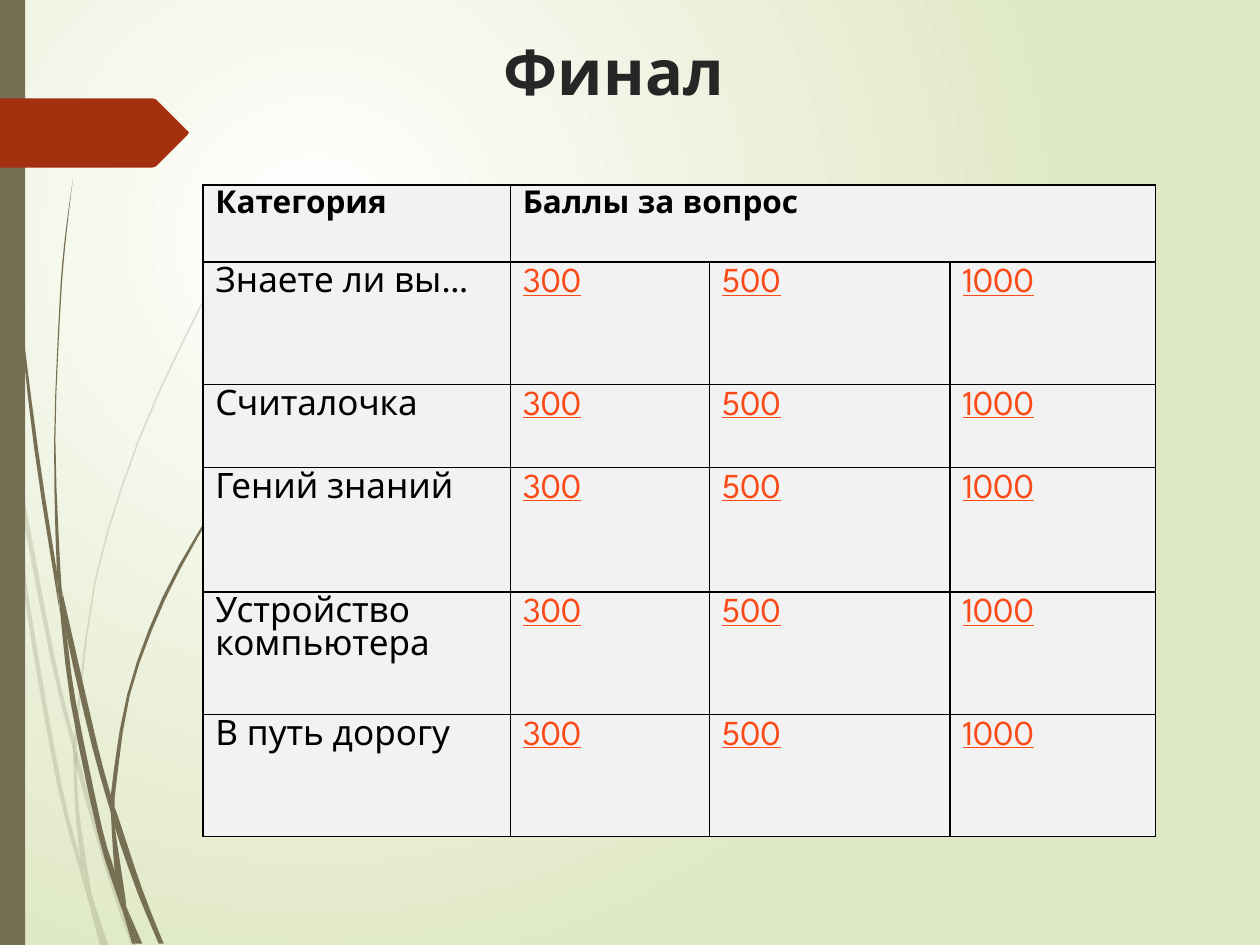
from dataclasses import dataclass

import lxml.etree
import pptx
import pptx.dml.color
import pptx.enum.shapes
import pptx.enum.text
import pptx.oxml
import pptx.oxml.ns
import pptx.util

Inches = pptx.util.Inches
Points = tuple[tuple[float, float], ...]
FONT = "League Spartan"
COLORS = {
    "white": "FFFFFF", "pale_green": "DFE8C4", "olive": "766F54", "rust": "A53010",
    "title": "262626", "black": "000000", "cell": "F2F2F2", "score": "FB4A18",
}


@dataclass(frozen=True)
class Blade:
    """A grass blade outlined by one edge down and another edge back."""
    down: Points
    back: Points


FADED_BLADES = (
    Blade(((0.08, 3.5), (0.06, 3.22), (0, 2.82)), ((0, 2.99), (0.07, 3.44), (0.08, 3.5))),
    Blade(((0.1, 3.45), (0.12, 3.76), (0.4, 5.22), (0.59, 5.99)),
          ((0.59, 5.86), (0.43, 5.2), (0.1, 3.45))),
    Blade(((0.61, 5.96), (0.61, 6.1), (0.85, 6.94), (1.04, 7.5)),
          ((1.08, 7.5), (0.88, 6.92), (0.64, 6.07), (0.61, 5.96))),
    Blade(((0.73, 7.11), (0.83, 7.5)), ((0.86, 7.5), (0.73, 7.11))),
    Blade(((0.08, 3.5), (0.19, 4.7), (0.45, 6.21), (0.64, 6.93), (0.7, 7.14)),
          ((0.69, 7.07), (0.64, 6.83), (0.48, 6.19), (0.22, 4.69), (0.12, 3.76), (0.08, 3.5))),
    Blade(((0.58, 5.99), (0.6, 6.46), (0.64, 6.83), (0.67, 6.92), (0.73, 7.11)),
          ((0.72, 7.06), (0.63, 6.46), (0.61, 6.1), (0.61, 6.08), (0.58, 5.99))),
    Blade(((2.17, 1.53), (2.01, 1.75), (1.86, 1.97), (1.58, 2.44), (1.1, 3.48),
           (0.75, 4.61), (0.59, 5.84), (0.59, 5.86), (0.61, 5.96)),
          ((0.61, 5.84), (0.76, 4.62), (1.11, 3.49), (1.59, 2.45), (1.87, 1.98),
           (2.01, 1.75), (2.17, 1.54))),
    Blade(((0.7, 7.14), (0.79, 7.5)), ((0.82, 7.5), (0.7, 7.14))),
    Blade(((0.59, 5.86), (0.58, 5.99), (0.61, 6.08), (0.61, 6.1)), ((0.61, 5.96), (0.59, 5.86))),
    Blade(((0.65, 6.83), (0.69, 7.07), (0.7, 7.14), (0.82, 7.5)),
          ((0.83, 7.5), (0.73, 7.11), (0.67, 6.92), (0.65, 6.83))),
)
SOLID_BLADES = (
    Blade(((0.02, 0), (0.03, 0.48), (0.05, 1.1), (0.14, 2.33), (0.27, 3.55), (0.46, 4.77),
           (0.47, 4.81)),
          ((0.45, 4.57), (0.45, 4.53), (0.3, 3.55), (0.15, 2.32), (0.06, 1.09), (0.04, 0.48),
           (0.03, 0))),
    Blade(((0.5, 4.72), (0.53, 5.05), (0.73, 5.92), (0.88, 6.45)),
          ((0.88, 6.33), (0.88, 6.31), (0.77, 5.9), (0.5, 4.72))),
    Blade(((0.91, 6.41), (0.91, 6.56), (1.09, 7.08), (1.26, 7.49)),
          ((1.3, 7.49), (1.13, 7.06), (0.94, 6.49), (0.91, 6.41))),
    Blade(((0.47, 4.77), (0.56, 5.57), (0.77, 6.59), (0.92, 7.08), (0.97, 7.22)),
          ((0.96, 7.17), (0.91, 6.91), (0.81, 6.57), (0.6, 5.56), (0.53, 5.05), (0.47, 4.77))),
    Blade(((0.58, 1.41), (0.51, 1.93), (0.47, 2.45), (0.43, 3.49), (0.45, 4.49), (0.49, 4.72)),
          ((0.5, 4.72), (0.48, 4.53), (0.44, 3.49), (0.48, 2.45), (0.52, 1.93), (0.58, 1.41))),
    Blade(((1, 7.19), (1.1, 7.49)), ((1.13, 7.49), (1, 7.19))),
    Blade(((0.45, 4.49), (0.45, 4.53), (0.47, 4.77), (0.53, 5.05)),
          ((0.5, 4.72), (0.49, 4.72), (0.45, 4.49))),
    Blade(((2.15, 3.44), (2.03, 3.58), (1.91, 3.73), (1.68, 4.05), (1.29, 4.74),
           (1.01, 5.51), (0.88, 6.31), (0.91, 6.41)),
          ((0.91, 6.33), (1.03, 5.52), (1.31, 4.76), (1.69, 4.06), (1.91, 3.74),
           (2.03, 3.59), (2.16, 3.44))),
    Blade(((0.97, 7.22), (1.05, 7.49)), ((1.08, 7.49), (0.97, 7.22))),
    Blade(((0.88, 6.45), (0.91, 6.91), (0.96, 7.06), (1, 7.19)),
          ((1, 7.16), (0.91, 6.56), (0.9, 6.51), (0.88, 6.45))),
    Blade(((0.88, 6.31), (0.88, 6.45), (0.9, 6.51), (0.91, 6.56)), ((0.91, 6.41), (0.88, 6.31))),
    Blade(((0.91, 6.91), (0.96, 7.17), (0.97, 7.22), (1.08, 7.49)),
          ((1.1, 7.49), (1, 7.19), (0.96, 7.06), (0.91, 6.91))),
)
ARROW = ((0, 0.78), (1.21, 0.78), (1.24, 0.79), (1.49, 1.04), (1.5, 1.05), (1.49, 1.07),
         (1.24, 1.32), (1.21, 1.33), (0, 1.33))

COLUMN_WIDTHS = (2.44, 1.58, 1.91, 1.63)
ROW_HEIGHTS = (0.61, 0.97, 0.66, 0.99, 0.97, 0.97)
CATEGORIES = ("Знаете ли вы…", "Считалочка", "Гений знаний", "Устройство компьютера",
              "В путь дорогу")
SCORES = ("300", "500", "1000")

HEADER = {"size": pptx.util.Pt(18), "bold": True}
BODY = {"size": pptx.util.Pt(20), "bold": False}
SCORE = BODY | {"underline": True}


def rgb(color: str) -> pptx.dml.color.RGBColor:
    return pptx.dml.color.RGBColor.from_string(COLORS[color])


def smooth_edge(anchors: Points, steps: int = 3) -> list[tuple[float, float]]:
    """Run a Catmull-Rom curve through the anchors; two anchors stay a straight line."""
    if len(anchors) == 2:
        return list(anchors)
    padded = (anchors[0], *anchors, anchors[-1])
    curve = [anchors[0]]
    for a, b, c, d in zip(padded, padded[1:], padded[2:], padded[3:]):
        for step in range(1, steps + 1):
            t = step / steps
            curve.append(tuple(
                q + t * (r - p) / 2 + t**2 * (2 * p - 5 * q + 4 * r - s) / 2
                + t**3 * (3 * q - p - 3 * r + s) / 2
                for p, q, r, s in zip(a, b, c, d)))
    return curve


def paint(shape, color: str, opacity: int = 100) -> None:
    shape.shadow.inherit = False
    shape.line.fill.background()
    shape.fill.solid()
    shape.fill.fore_color.rgb = rgb(color)
    if opacity < 100:
        tint = shape._element.spPr.find(".//" + pptx.oxml.ns.qn("a:srgbClr"))
        lxml.etree.SubElement(tint, pptx.oxml.ns.qn("a:alpha"), val=str(opacity * 1000))


def draw_outline(shapes, points, color: str, opacity: int = 100) -> None:
    start, *corners = [(Inches(x), Inches(y)) for x, y in points]
    builder = shapes.build_freeform(*start)
    builder.add_line_segments(corners, close=True)
    paint(builder.convert_to_shape(), color, opacity)


def draw_grass(page, blades: tuple[Blade, ...], opacity: int) -> None:
    tuft = page.shapes.add_group_shape()
    for blade in blades:
        draw_outline(tuft.shapes, smooth_edge(blade.down) + smooth_edge(blade.back),
                     "olive", opacity)


def write(frame, text: str, color: str, formats: dict) -> None:
    frame.word_wrap = True
    span = frame.paragraphs[0].add_run()
    span.text = text
    span.font.color.rgb = rgb(color)
    for name, value in ({"name": FONT} | formats).items():
        setattr(span.font, name, value)


def style_cell(cell) -> None:
    properties = cell._tc.get_or_add_tcPr()
    for side in ("lnL", "lnR", "lnT", "lnB"):
        properties.append(pptx.oxml.parse_xml(
            f'<a:{side} {pptx.oxml.ns.nsdecls("a")} w="12700"><a:solidFill>'
            f'<a:srgbClr val="{COLORS["black"]}"/></a:solidFill></a:{side}>'))
    cell.fill.solid()
    cell.fill.fore_color.rgb = rgb("cell")


def draw_background(page) -> None:
    fill = page.background.fill
    fill.gradient()
    for stop, color, position in zip(fill.gradient_stops, ("white", "pale_green"), (0, 1)):
        stop.color.rgb = rgb(color)
        stop.position = position
    gradient = page._element.find(".//" + pptx.oxml.ns.qn("a:gradFill"))
    gradient.replace(gradient.find(pptx.oxml.ns.qn("a:lin")), pptx.oxml.parse_xml(
        f'<a:path {pptx.oxml.ns.nsdecls("a")} path="circle">'
        '<a:fillToRect l="50000" t="50000" r="100000" b="100000"/></a:path>'))


def draw_table(page) -> None:
    table = page.shapes.add_table(
        len(ROW_HEIGHTS), len(COLUMN_WIDTHS), Inches(1.61), Inches(1.47),
        Inches(sum(COLUMN_WIDTHS)), Inches(sum(ROW_HEIGHTS))).table
    table.first_row = table.horz_banding = False
    for column, width in zip(table.columns, COLUMN_WIDTHS):
        column.width = Inches(width)
    for row, height in zip(table.rows, ROW_HEIGHTS):
        row.height = Inches(height)
    for cell in table.iter_cells():
        style_cell(cell)
    table.cell(0, 1).merge(table.cell(0, 3))
    for column, heading in enumerate(("Категория", "Баллы за вопрос")):
        write(table.cell(0, column).text_frame, heading, "black", HEADER)
    for row, category in enumerate(CATEGORIES, start=1):
        write(table.cell(row, 0).text_frame, category, "black", BODY)
        for column, score in enumerate(SCORES, start=1):
            write(table.cell(row, column).text_frame, score, "score", SCORE)


def main() -> None:
    deck = pptx.Presentation()
    deck.slide_width, deck.slide_height = Inches(10), Inches(7.5)
    page = deck.slides.add_slide(deck.slide_layouts[6])

    # Backdrop: gradient, grass, side bar and arrow
    draw_background(page)
    draw_grass(page, FADED_BLADES, 20)
    draw_grass(page, SOLID_BLADES, 100)
    bar = page.shapes.add_shape(pptx.enum.shapes.MSO_SHAPE.RECTANGLE,
                                0, 0, Inches(0.2), deck.slide_height)
    paint(bar, "olive")
    draw_outline(page.shapes, ARROW, "rust")

    # Title
    box = page.shapes.add_textbox(Inches(3.9), Inches(0.21), Inches(6.1), Inches(1.4))
    box.text_frame.vertical_anchor = pptx.enum.text.MSO_ANCHOR.TOP
    write(box.text_frame, "Финал", "title", {"size": pptx.util.Pt(36), "bold": True})

    # Score board
    draw_table(page)
    deck.save("out.pptx")


if __name__ == "__main__":
    main()
